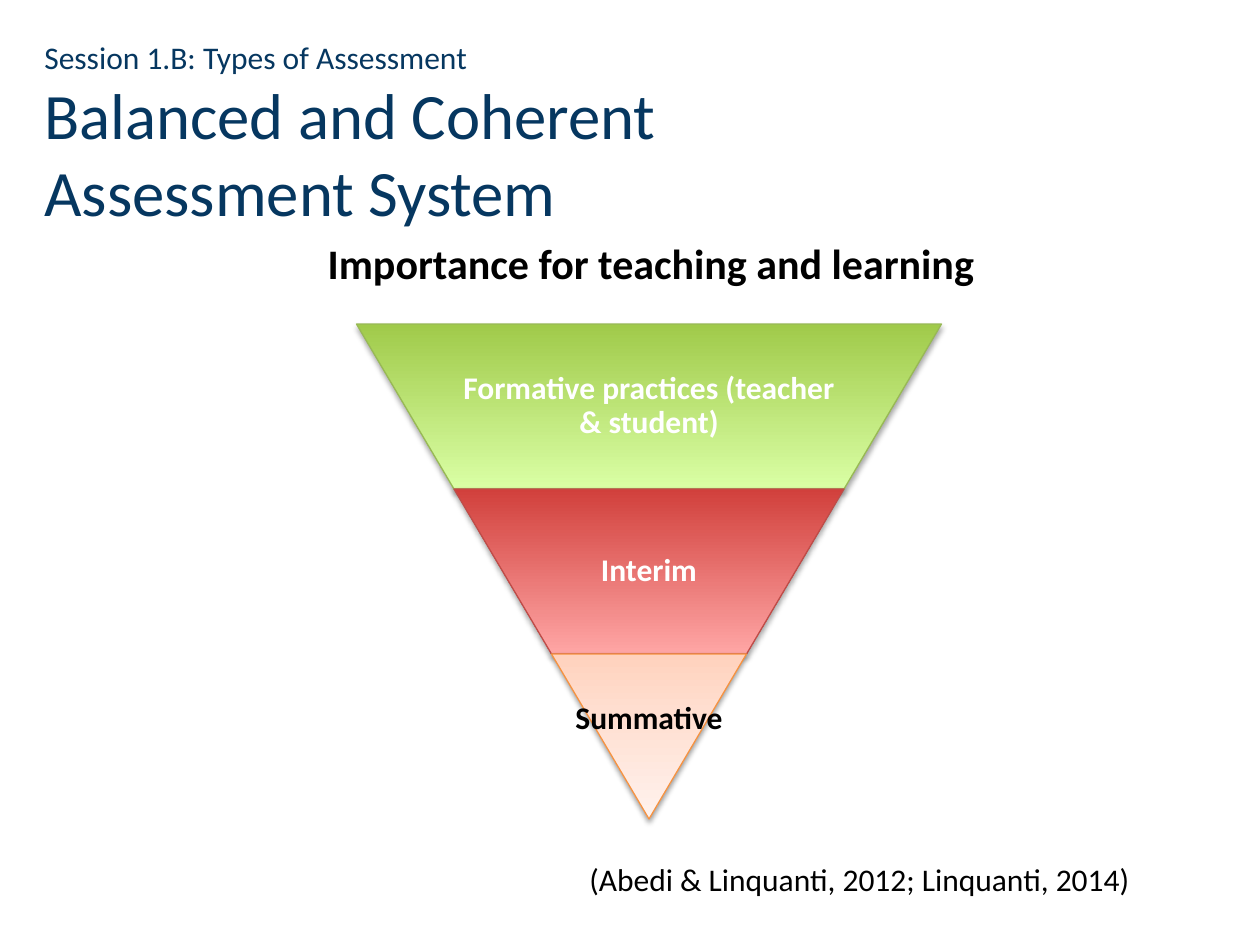
from lxml import etree
from pptx import Presentation
from pptx.dml.color import RGBColor
from pptx.enum.shapes import MSO_SHAPE
from pptx.enum.text import MSO_ANCHOR, PP_ALIGN
from pptx.oxml import parse_xml
from pptx.oxml.ns import nsdecls, qn
from pptx.util import Emu, Pt

NAVY = RGBColor(0x06, 0x37, 0x60)
BLACK = RGBColor(0, 0, 0)
WHITE = RGBColor(255, 255, 255)
GREEN_LINE = RGBColor(0x98, 0xB9, 0x55)
RED_LINE = RGBColor(0xBF, 0x4C, 0x48)
ORANGE_LINE = RGBColor(0xF6, 0x92, 0x40)
GREENS = [(0, RGBColor(0xA0, 0xCA, 0x4A)), (100, RGBColor(0xDA, 0xFF, 0xA5))]
REDS = [(0, RGBColor(0xD1, 0x40, 0x3C)), (100, RGBColor(0xFF, 0xA6, 0xA5))]
PEACHES = [(0, RGBColor(0xFF, 0xD2, 0xBD)), (35, RGBColor(0xFF, 0xDE, 0xD0)),
           (100, RGBColor(0xFF, 0xF2, 0xED))]

# Text boxes: text, (left, top, width, height), size, colour, bold, alignment, wrap
TEXTS = [
    ("Balanced and Coherent\vAssessment System", (32, 73, 1102, 158), 37, NAVY,
     False, PP_ALIGN.LEFT, True),
    ("(Abedi & Linquanti, 2012; Linquanti, 2014)", (577, 854, 620, 50), 18, BLACK,
     False, PP_ALIGN.LEFT, True),
    ("Importance for teaching and learning", (315, 231, 672, 63), 24, BLACK,
     True, PP_ALIGN.CENTER, True),
    ("Session 1.B: Types of Assessment", (32, 32, 452, 50), 18, NAVY,
     False, PP_ALIGN.LEFT, False),
]

# Pyramid tiers from the top: label, gradient, outline, text colour,
# label width as a share of the tier, label height, shadow opacity
TIERS = [
    ("Formative practices (teacher & student)", GREENS, GREEN_LINE, WHITE, 0.65, 165, 35),
    ("Interim", REDS, RED_LINE, WHITE, 0.65, 165, 35),
    ("Summative", PEACHES, ORANGE_LINE, BLACK, 1, 131, 38),
]
CENTER, TOP, BASE, TIER_HEIGHT = 649, 324, 585, 165


def px(value):
    return Emu(round(value * 914400 / 126))


def add_text(slide, text, box, size, color, bold, align, wrap=True,
             inset=None, line_spacing=None):
    frame = slide.shapes.add_textbox(*map(px, box)).text_frame
    frame.word_wrap = wrap
    frame.vertical_anchor = MSO_ANCHOR.MIDDLE
    if inset is not None:
        frame.margin_left = frame.margin_right = px(inset)
        frame.margin_top = frame.margin_bottom = px(inset)
    paragraph = frame.paragraphs[0]
    paragraph.text = text
    paragraph.alignment = align
    paragraph.line_spacing = line_spacing
    font = paragraph.font
    font.name, font.size, font.bold = "Calibri", Pt(size), bold
    font.color.rgb = color


def set_gradient(shape, stops):
    shape.fill.gradient()
    shape.fill.gradient_angle = 90
    stop_list = shape.fill._xPr.find(qn("a:gradFill")).find(qn("a:gsLst"))
    for old_stop in list(stop_list):
        stop_list.remove(old_stop)
    for position, color in stops:
        stop = etree.SubElement(stop_list, qn("a:gs"), pos=str(position * 1000))
        etree.SubElement(stop, qn("a:srgbClr"), val=str(color))


def set_shadow(shape, opacity):
    shape.shadow.inherit = False
    effects = shape._element.spPr.find(qn("a:effectLst"))
    effects.append(parse_xml(
        f'<a:outerShdw {nsdecls("a")} blurRad="40000" dist="23000" dir="5400000"'
        f' rotWithShape="0"><a:srgbClr val="000000"><a:alpha val="{opacity * 1000}"/>'
        '</a:srgbClr></a:outerShdw>'))


def add_tier(slide, index, label, stops, line, color, label_share, label_height, opacity):
    step = BASE / len(TIERS)
    width = BASE - index * step
    top = TOP + index * TIER_HEIGHT
    tier = slide.shapes.add_shape(
        MSO_SHAPE.TRAPEZOID,
        *map(px, (CENTER - width / 2, top, width, TIER_HEIGHT)))
    tier.rotation = 180
    tier.adjustments[0] = step / 2 / min(width, TIER_HEIGHT)
    set_gradient(tier, stops)
    tier.line.color.rgb = line
    tier.line.width = Pt(0.75)
    set_shadow(tier, opacity)

    label_width = width * label_share
    add_text(slide, label, (CENTER - label_width / 2, top, label_width, label_height),
             18, color, True, PP_ALIGN.CENTER, inset=4, line_spacing=0.9)


def main():
    presentation = Presentation()
    presentation.slide_width, presentation.slide_height = px(1260), px(945)
    slide = presentation.slides.add_slide(presentation.slide_layouts[6])

    # Inverted pyramid
    for index, tier in enumerate(TIERS):
        add_tier(slide, index, *tier)

    # Title, heading and citation
    for text in TEXTS:
        add_text(slide, *text)

    presentation.save("out.pptx")


if __name__ == "__main__":
    main()
